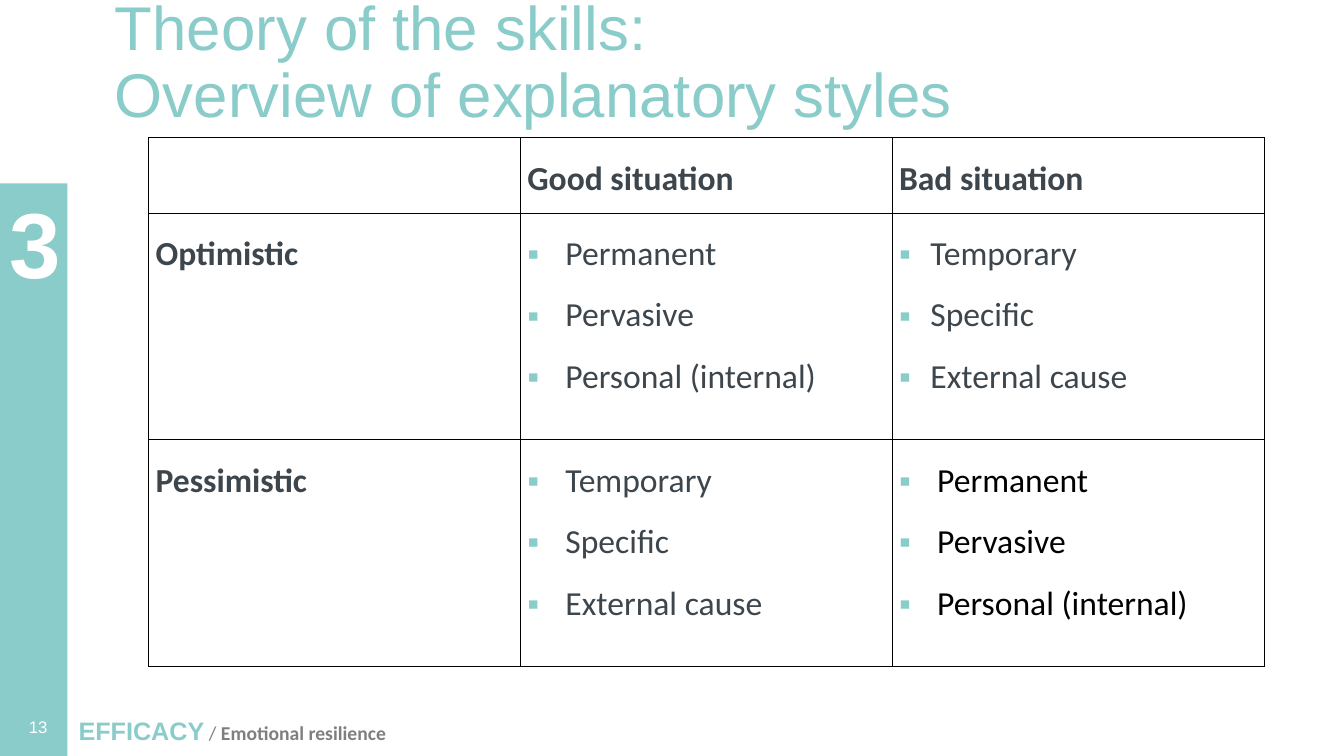
from lxml import etree
from pptx import Presentation
from pptx.dml.color import RGBColor
from pptx.enum.shapes import MSO_SHAPE
from pptx.enum.text import MSO_ANCHOR, MSO_AUTO_SIZE, PP_ALIGN
from pptx.oxml import parse_xml
from pptx.oxml.ns import nsdecls, qn
from pptx.util import Cm, Pt

RECTANGLE = MSO_SHAPE.RECTANGLE
BOTTOM = MSO_ANCHOR.BOTTOM
LEFT = PP_ALIGN.LEFT
NO_AUTOFIT = MSO_AUTO_SIZE.NONE

TEAL, SLATE, GREY = "8ACCCA", "3D464D", "7F7F7F"
WHITE, BLACK = "FFFFFF", "000000"


def rgb(value):
    return RGBColor.from_string(value)


def format_run(run, color, **formats):
    run.font.color.rgb = rgb(color)
    for attribute, value in formats.items():
        setattr(run.font, attribute, value)


prs = Presentation()
prs.slide_width, prs.slide_height = Cm(33.87), Cm(19.05)
slide = prs.slides.add_slide(prs.slide_layouts[5])

# Side band
band = slide.shapes.add_shape(RECTANGLE, 0, Cm(4.62), Cm(1.7), Cm(14.43))
band.shadow.inherit = False
band.fill.solid()
band.fill.fore_color.rgb = rgb(TEAL)
band.line.fill.background()

# Footer, chapter number and page number: box in cm, then runs
labels = [
    ((1.73, 17.91, 10.19, 1.63), [
        ("EFFICACY", TEAL, 18, "Arial", True),
        (" / ", GREY, 14, "Calibri", False),
        ("Emotional resilience", GREY, 14, "Calibri", True)]),
    ((0, 4.57, 2.44, 3.07), [("3", WHITE, 66, "Arial", True)]),
    ((0.48, 17.93, 1.3, 0.76), [("13", WHITE, 12, "Arial", False)]),
]
for box, runs in labels:
    frame = slide.shapes.add_textbox(*map(Cm, box)).text_frame
    frame.word_wrap = True
    for text, color, size, font, bold in runs:
        run = frame.paragraphs[0].add_run()
        run.text = text
        format_run(run, color, size=Pt(size), name=font, bold=bold)

# Title
title = slide.shapes.title
title.left, title.top, title.width, title.height = map(Cm, (2.64, 0.05, 29.21, 3.25))
heading = title.text_frame
heading.text = "Theory of the skills:\vOverview of explanatory styles"
heading.auto_size = NO_AUTOFIT
heading.word_wrap = True
heading.vertical_anchor = BOTTOM
heading.margin_top = heading.margin_bottom = 0
heading.paragraphs[0].alignment = LEFT
heading.paragraphs[0].line_spacing = 0.9
for run in heading.paragraphs[0].runs:
    format_run(run, TEAL, size=Pt(44.1), name="Arial", bold=False)

# Table of explanatory styles
lasting = ["Permanent", "Pervasive", "Personal (internal)"]
passing = ["Temporary", "Specific", "External cause"]
styles = [
    [[], ["Good situation"], ["Bad situation"]],
    [["Optimistic"], lasting, passing],
    [["Pessimistic"], passing, lasting],
]
table = slide.shapes.add_table(3, 3, Cm(3.75), Cm(3.47), Cm(28.11), Cm(13.32)).table
table.first_row = table.horz_banding = False
for column in table.columns:
    column.width = Cm(9.37)
for row, height in zip(table.rows, (1.9, 5.71, 5.71)):
    row.height = Cm(height)

for r, row_items in enumerate(styles):
    for c, items in enumerate(row_items):
        cell = table.cell(r, c)
        cell.margin_left = cell.margin_right = Cm(0.17)
        cell.margin_top = cell.margin_bottom = 0
        cell_properties = cell._tc.get_or_add_tcPr()
        for side in ("lnL", "lnR", "lnT", "lnB"):
            cell_properties.append(parse_xml(
                f'<a:{side} {nsdecls("a")} w="12700"><a:solidFill>'
                f'<a:srgbClr val="{BLACK}"/></a:solidFill></a:{side}>'))
        cell.fill.background()

        bulleted = r > 0 and c > 0
        color = BLACK if (r, c) == (2, 2) else SLATE
        indent = Cm(0.79 if (r, c) == (1, 2) else 0.96)
        for i, item in enumerate(items):
            frame = cell.text_frame
            paragraph = frame.add_paragraph() if i else frame.paragraphs[0]
            paragraph.line_spacing = 1.5
            if bulleted:
                properties = paragraph._p.get_or_add_pPr()
                properties.set("marL", str(indent))
                properties.set("indent", str(-indent))
                bullet_color = etree.SubElement(properties, qn("a:buClr"))
                etree.SubElement(bullet_color, qn("a:srgbClr"), val=TEAL)
                etree.SubElement(properties, qn("a:buFont"), typeface="Arial")
                etree.SubElement(properties, qn("a:buChar"), char="▪")
            run = paragraph.add_run()
            run.text = item
            format_run(run, color, size=Pt(24), name="Calibri", bold=not bulleted)

prs.save("out.pptx")
